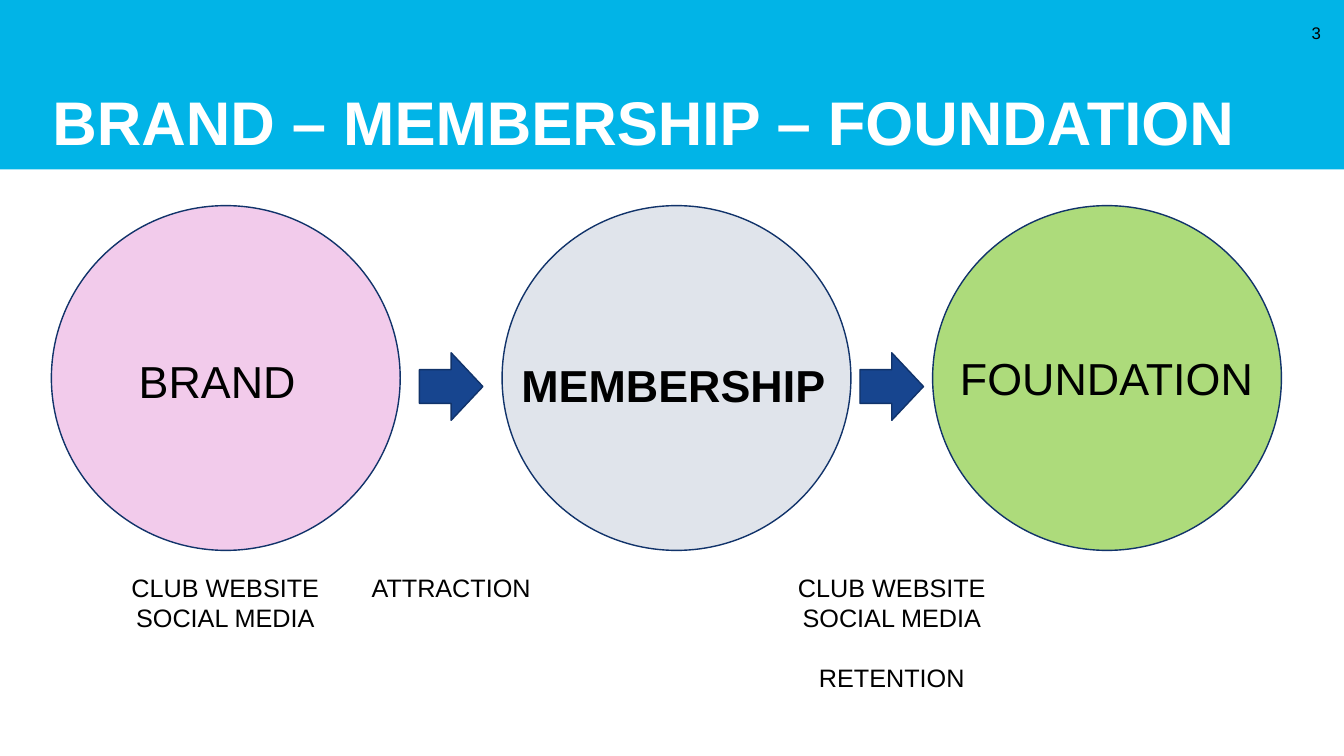
from dataclasses import dataclass

from lxml.etree import SubElement
from pptx import Presentation
from pptx.dml.color import RGBColor
from pptx.enum.shapes import MSO_SHAPE
from pptx.enum.text import MSO_ANCHOR, MSO_AUTO_SIZE, PP_ALIGN
from pptx.oxml.ns import qn
from pptx.shapes.autoshape import Shape
from pptx.slide import Slide
from pptx.text.text import _Paragraph
from pptx.util import Inches, Pt

COLORS = {
    "band": "01B4E7",
    "outline": "11336A",
    "arrow": "17458F",
    "brand": "E491D5",
    "membership": "D6DCE5",
    "foundation": "92D050",
    "title": "FFFFFF",
    "text": "000000",
}
FONT = "Arial"
SLIDE_WIDTH, BAND_HEIGHT = 13.33, 1.68
CIRCLE_TOP, CIRCLE_WIDTH, CIRCLE_HEIGHT = 2.04, 3.46, 3.42
ARROW_TOP, ARROW_WIDTH, ARROW_HEIGHT = 3.5, 0.63, 0.67
NOTE_TOP = 5.63
BLANK_LINE = 20.7  # points, one line of 18 pt text


@dataclass(frozen=True)
class Box:
    left: float
    top: float
    width: float
    height: float

    def lengths(self) -> list[int]:
        return [Inches(v) for v in (self.left, self.top, self.width, self.height)]


@dataclass(frozen=True)
class Label:
    box: Box
    lines: tuple[str, ...]
    size: int
    bold: bool = False
    align: PP_ALIGN = PP_ALIGN.CENTER
    anchor: MSO_ANCHOR = MSO_ANCHOR.TOP
    gap_before_last: float = 0


@dataclass(frozen=True)
class Stage:
    left: float
    color: str
    opacity: int
    label: Label


STAGES = (
    Stage(4.98, "membership", 75,
          Label(Box(5, 3.5, 3.36, 0.64), ("MEMBERSHIP",), 32, bold=True)),
    Stage(9.25, "foundation", 75,
          Label(Box(9.37, 3.43, 3.21, 0.64), ("FOUNDATION",), 32)),
    Stage(0.51, "brand", 47,
          Label(Box(1.22, 3.46, 1.87, 0.64), ("BRAND",), 32)),
)
ARROW_LEFTS = (4.16, 8.53)
CHANNELS = ("CLUB WEBSITE", "SOCIAL MEDIA")
NOTES = (
    Label(Box(1.15, NOTE_TOP, 2.17, 0.71), CHANNELS, 18),
    Label(Box(3.54, NOTE_TOP, 1.87, 0.4), ("ATTRACTION",), 18),
    Label(Box(7.59, NOTE_TOP, 2.51, 1.31), (*CHANNELS, "RETENTION"), 18,
          gap_before_last=BLANK_LINE),
)
PAGE_NUMBER = Label(Box(12.74, 0.13, 0.46, 0.4), ("3",), 12,
                    align=PP_ALIGN.RIGHT, anchor=MSO_ANCHOR.MIDDLE)


def rgb(name: str) -> RGBColor:
    return RGBColor.from_string(COLORS[name])


def add_run(paragraph: _Paragraph, text: str, size: int, color: str, bold: bool) -> None:
    run = paragraph.add_run()
    run.text = text
    run.font.name = FONT
    run.font.size = Pt(size)
    run.font.bold = bold
    run.font.color.rgb = rgb(color)


def add_filled_shape(slide: Slide, kind: MSO_SHAPE, box: Box, color: str,
                     outlined: bool = True, opacity: int = 100) -> Shape:
    shape = slide.shapes.add_shape(kind, *box.lengths())
    shape.shadow.inherit = False
    shape.fill.solid()
    shape.fill.fore_color.rgb = rgb(color)
    if opacity < 100:
        fill_color = shape._element.spPr.find(qn("a:solidFill")).find(qn("a:srgbClr"))
        SubElement(fill_color, qn("a:alpha"), val=str(opacity * 1000))
    if outlined:
        shape.line.color.rgb = rgb("outline")
        shape.line.width = Pt(1)
    else:
        shape.line.fill.background()
    return shape


def add_label(slide: Slide, label: Label) -> None:
    frame = slide.shapes.add_textbox(*label.box.lengths()).text_frame
    frame.word_wrap = True
    frame.vertical_anchor = label.anchor
    for index, line in enumerate(label.lines):
        paragraph = frame.add_paragraph() if index else frame.paragraphs[0]
        paragraph.alignment = label.align
        add_run(paragraph, line, label.size, "text", label.bold)
    if label.gap_before_last:
        frame.paragraphs[-1].space_before = Pt(label.gap_before_last)


def add_header(slide: Slide) -> None:
    title = slide.shapes.title
    title.left, title.top, title.width, title.height = Box(
        0.42, 0, 12.58, BAND_HEIGHT).lengths()
    frame = title.text_frame
    frame.auto_size = MSO_AUTO_SIZE.NONE
    frame.word_wrap = True
    frame.vertical_anchor = MSO_ANCHOR.BOTTOM
    frame.margin_left = frame.margin_right = frame.margin_bottom = Inches(0.1)
    frame.margin_top = 0
    heading = frame.paragraphs[0]
    heading.alignment = PP_ALIGN.LEFT
    heading.line_spacing = 0.9
    add_run(heading, "BRAND – MEMBERSHIP – FOUNDATION", 44, "title", True)

    band = add_filled_shape(slide, MSO_SHAPE.RECTANGLE,
                            Box(0, 0, SLIDE_WIDTH, BAND_HEIGHT), "band", outlined=False)
    title._element.addprevious(band._element)
    add_label(slide, PAGE_NUMBER)


def main() -> None:
    deck = Presentation()
    deck.slide_width = Inches(SLIDE_WIDTH)
    deck.slide_height = Inches(7.5)
    slide = deck.slides.add_slide(deck.slide_layouts.get_by_name("Title Only"))

    add_header(slide)
    for stage in STAGES:
        circle = Box(stage.left, CIRCLE_TOP, CIRCLE_WIDTH, CIRCLE_HEIGHT)
        add_filled_shape(slide, MSO_SHAPE.OVAL, circle, stage.color, opacity=stage.opacity)
        add_label(slide, stage.label)
    for left in ARROW_LEFTS:
        arrow = Box(left, ARROW_TOP, ARROW_WIDTH, ARROW_HEIGHT)
        add_filled_shape(slide, MSO_SHAPE.RIGHT_ARROW, arrow, "arrow")
    for note in NOTES:
        add_label(slide, note)

    deck.save("out.pptx")


if __name__ == "__main__":
    main()
